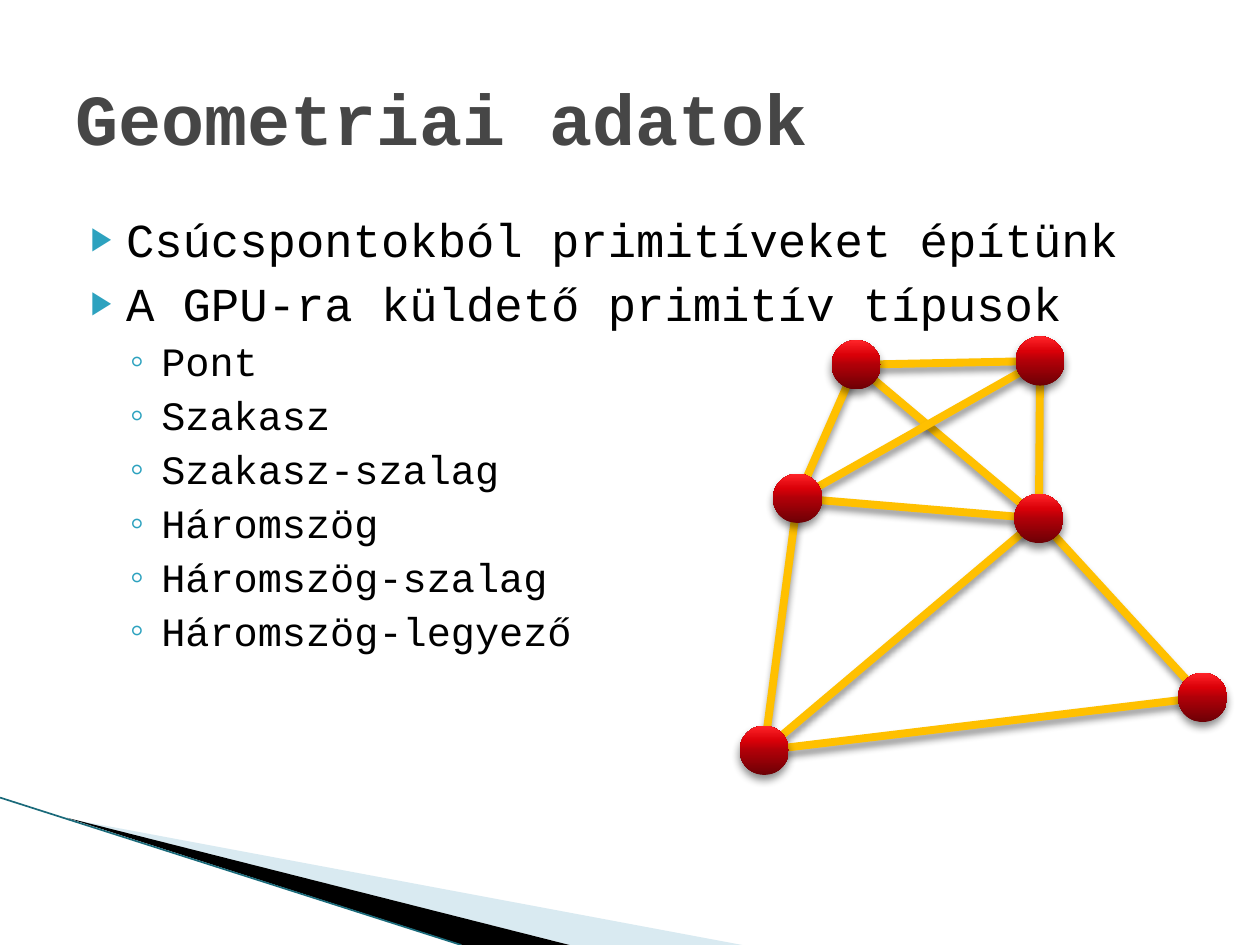
from dataclasses import dataclass

from lxml.etree import SubElement
from pptx import Presentation
from pptx.dml.color import RGBColor
from pptx.enum.shapes import MSO_CONNECTOR, MSO_SHAPE
from pptx.enum.text import MSO_ANCHOR, MSO_AUTO_SIZE, PP_ALIGN
from pptx.oxml.ns import qn
from pptx.util import Inches, Pt

# Grid: 100 columns by 75 rows over the slide
SLIDE_W, SLIDE_H = Inches(10), Inches(7.5)
COLUMNS, ROWS = 100, 75

FONT = "Courier New"
BLACK = RGBColor(0x00, 0x00, 0x00)
TITLE_GREY = RGBColor(0x46, 0x46, 0x46)
BULLET_TEAL = RGBColor(0x2D, 0xA2, 0xBF)
RIBBON_BLUE = RGBColor(0xA0, 0xCB, 0xDC)
RIBBON_EDGE = RGBColor(0x1A, 0x6A, 0x7A)
EDGE_YELLOW = RGBColor(0xFF, 0xC0, 0x00)
BALL_STOPS = [
    (0, RGBColor(0x6D, 0x00, 0x05)),
    (50, RGBColor(0xB0, 0x00, 0x08)),
    (70, RGBColor(0xDA, 0x00, 0x08)),
    (100, RGBColor(0xFF, 0x24, 0x29)),
]
BALL_SIZE = 3.9


@dataclass(frozen=True)
class Point:
    col: float
    row: float


@dataclass(frozen=True)
class Level:
    size: float
    indent: float
    hanging: float
    space: float
    bullet: str
    bullet_size: int


LEVELS = [
    Level(27, 0.4, 0.28, 4, "▶", 68),
    Level(23, 0.68, 0.25, 3.2, "◦", 100),
]
ITEMS = [
    (0, "Csúcspontokból primitíveket építünk"),
    (0, "A GPU-ra küldető primitív típusok"),
    (1, "Pont"),
    (1, "Szakasz"),
    (1, "Szakasz-szalag"),
    (1, "Háromszög"),
    (1, "Háromszög-szalag"),
    (1, "Háromszög-legyező"),
]
VERTICES = {
    "top_left": Point(67.95, 28.95),
    "top_right": Point(82.55, 28.65),
    "mid_left": Point(63.3, 39.55),
    "mid_right": Point(82.45, 41.15),
    "low_left": Point(60.65, 59.55),
    "low_right": Point(95.45, 55.35),
}
EDGES = [
    ("mid_right", "top_left"),
    ("mid_right", "top_right"),
    ("low_left", "mid_left"),
    ("mid_left", "mid_right"),
    ("low_right", "mid_right"),
    ("mid_left", "top_left"),
    ("top_left", "top_right"),
    ("low_left", "mid_right"),
    ("mid_left", "top_right"),
    ("low_left", "low_right"),
]


def x(col: float) -> int:
    return round(SLIDE_W * col / COLUMNS)


def y(row: float) -> int:
    return round(SLIDE_H * row / ROWS)


def place(shape, col: float, row: float, cols: float, rows: float) -> None:
    shape.left, shape.top, shape.width, shape.height = x(col), y(row), x(cols), y(rows)


def write(paragraph, text: str, *, size: float, color: RGBColor, bold: bool = False) -> None:
    paragraph.text = text
    paragraph.alignment = PP_ALIGN.LEFT
    font = paragraph.font
    font.name, font.size, font.bold = FONT, Pt(size), bold
    font.color.rgb = color


def add_bullet(paragraph, level: Level) -> None:
    props = paragraph._p.get_or_add_pPr()
    props.set("marL", str(Inches(level.indent)))
    props.set("indent", str(-Inches(level.hanging)))
    SubElement(SubElement(props, qn("a:buClr")), qn("a:srgbClr"), val=str(BULLET_TEAL))
    SubElement(props, qn("a:buSzPct"), val=str(level.bullet_size * 1000))
    SubElement(props, qn("a:buChar"), char=level.bullet)


def add_alpha(color_element, percent: int) -> None:
    SubElement(color_element, qn("a:alpha"), val=str(percent * 1000))


def add_shadow(effects, opacity: int, blur: float) -> None:
    shadow = SubElement(effects, qn("a:outerShdw"), blurRad=str(Pt(blur)),
                        dist=str(Pt(3)), dir="5400000", rotWithShape="0")
    add_alpha(SubElement(shadow, qn("a:srgbClr"), val=str(BLACK)), opacity)


def add_line(slide, start: Point, end: Point, color: RGBColor, width: float):
    """Draw a line and return its empty effect list."""
    line = slide.shapes.add_connector(
        MSO_CONNECTOR.STRAIGHT, x(start.col), y(start.row), x(end.col), y(end.row))
    line.line.color.rgb = color
    line.line.width = Pt(width)
    return SubElement(line._element.spPr, qn("a:effectLst"))


def add_ribbon(slide, corners: list[Point], color: RGBColor, opacity: int = 100) -> None:
    outline = [(x(corner.col), y(corner.row)) for corner in corners]
    builder = slide.shapes.build_freeform(*outline[0])
    builder.add_line_segments(outline[1:], close=True)
    ribbon = builder.convert_to_shape()
    ribbon.shadow.inherit = False
    ribbon.fill.solid()
    ribbon.fill.fore_color.rgb = color
    ribbon.line.fill.background()
    if opacity < 100:
        add_alpha(ribbon._element.spPr.find(qn("a:solidFill"))[0], opacity)


def add_ball(slide, center: Point) -> None:
    ball = slide.shapes.add_shape(MSO_SHAPE.OVAL, 0, 0, 0, 0)
    place(ball, center.col - BALL_SIZE / 2, center.row - BALL_SIZE / 2, BALL_SIZE, BALL_SIZE)
    ball.line.fill.background()
    ball.shadow.inherit = False
    ball.fill.gradient()
    ball.fill.gradient_angle = 90
    properties = ball._element.spPr
    stops = properties.find(qn("a:gradFill")).find(qn("a:gsLst"))
    stops[:] = []
    for position, color in BALL_STOPS:
        stop = SubElement(stops, qn("a:gs"), pos=str(position * 1000))
        SubElement(stop, qn("a:srgbClr"), val=str(color))
    add_shadow(properties.find(qn("a:effectLst")), 45, 5)


def main() -> None:
    deck = Presentation()
    deck.slide_width, deck.slide_height = SLIDE_W, SLIDE_H
    slide = deck.slides.add_slide(deck.slide_layouts[1])

    # Corner ribbons
    add_ribbon(slide, [Point(5.5, 65), Point(58.9, 75), Point(45.2, 75)], RIBBON_BLUE, 40)
    add_ribbon(slide, [Point(5.3, 64.9), Point(45.2, 75), Point(36.7, 75)], BLACK)
    add_line(slide, Point(0, 63.3), Point(36.6, 75), RIBBON_EDGE, 0.95)

    # Title
    title = slide.shapes.title
    place(title, 5, 3, 90, 12.5)
    title.text_frame.vertical_anchor = MSO_ANCHOR.MIDDLE
    write(title.text_frame.paragraphs[0], "Geometriai adatok",
          size=41, color=TITLE_GREY, bold=True)

    # Bulleted list
    body = slide.placeholders[1]
    place(body, 5, 16.2, 90, 49.5)
    frame = body.text_frame
    frame.auto_size = MSO_AUTO_SIZE.NONE
    frame.margin_top = Inches(0.05)
    for index, (depth, text) in enumerate(ITEMS):
        paragraph = frame.add_paragraph() if index else frame.paragraphs[0]
        level = LEVELS[depth]
        paragraph.level = depth
        paragraph.space_before = Pt(level.space if index else 0)
        add_bullet(paragraph, level)
        write(paragraph, text, size=level.size, color=BLACK)

    # Mesh: edges first, vertices on top
    for start, end in EDGES:
        add_shadow(add_line(slide, VERTICES[start], VERTICES[end], EDGE_YELLOW, 4.5), 40, 4)
    for center in VERTICES.values():
        add_ball(slide, center)

    deck.save("out.pptx")


if __name__ == "__main__":
    main()
